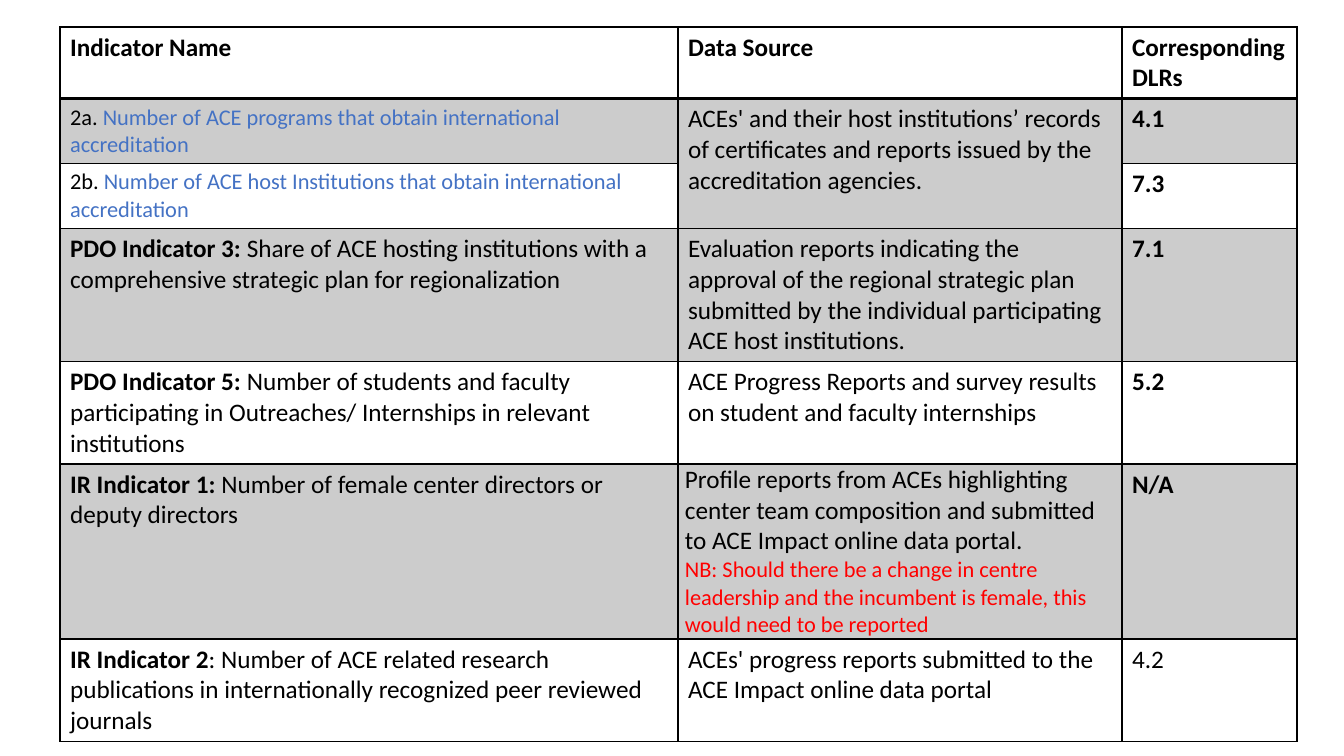
from lxml import etree
from pptx import Presentation
from pptx import util as u
from pptx.dml.color import RGBColor
from pptx.enum import text
from pptx.oxml.ns import qn

PX = 914400 / 100.8
HUES = {"ink": "000000", "blue": "4472C4", "red": "FF0000"}
COLS = [618, 444, 175]
ROWS = [71, 65, 65, 133, 102, 175, 102]
SHADED = (1, 3, 5)
HEAD = {"bold": True}
BODY = {"bold": False}
SMALL = {"size": u.Pt(16)}
LINK = {"size": u.Pt(16), "hue": "blue"}
NOTE = {"size": u.Pt(16), "hue": "red"}

GRID = [
    [[[("Indicator Name", HEAD)]],
     [[("Data Source", HEAD)]],
     [[("Corresponding DLRs", HEAD)]]],
    [[[("2a. ", SMALL),
       ("Number of ACE programs that obtain international accreditation", LINK)]],
     [[("ACEs' and their host institutions’ records of certificates and "
        "reports issued by the accreditation agencies.", BODY)]],
     [[("4.1", HEAD)]]],
    [[[("2b. ", SMALL),
       ("Number of ACE host Institutions that obtain international accreditation", LINK)]],
     [],
     [[("7.3", HEAD)]]],
    [[[("PDO Indicator 3: ", HEAD),
       ("Share of ACE hosting institutions with a comprehensive strategic "
        "plan for regionalization", BODY)]],
     [[("Evaluation reports indicating the approval of the regional strategic "
        "plan submitted by the individual participating ACE host institutions.", BODY)]],
     [[("7.1", HEAD)]]],
    [[[("PDO Indicator 5: ", HEAD),
       ("Number of students and faculty participating in Outreaches/ "
        "Internships in relevant institutions", BODY)]],
     [[("ACE Progress Reports and survey results on student and faculty "
        "internships", BODY)]],
     [[("5.2", HEAD)]]],
    [[[("IR Indicator 1:", HEAD),
       (" Number of female center directors or deputy directors", BODY)]],
     [[("Profile reports from ACEs highlighting center team composition and "
        "submitted to ACE Impact online data portal.", BODY)],
      [("NB: Should there be a change in centre leadership and the incumbent "
        "is female, this would need to be reported", NOTE)]],
     [[("N/A", HEAD)]]],
    [[[("IR Indicator 2", HEAD),
       (": Number of ACE related research publications in internationally "
        "recognized peer reviewed journals", BODY)]],
     [[("ACEs' progress reports submitted to the ACE Impact online data portal", BODY)]],
     [[("4.2", BODY)]]],
]


def px(n):
    return u.Emu(round(n * PX))


def assign(item, values):
    for name, value in values.items():
        setattr(item, name, value)


def write(cell, paras):
    frame = cell.text_frame
    for i, runs in enumerate(paras):
        para = frame.paragraphs[0] if i == 0 else frame.add_paragraph()
        for words, style in runs:
            run = para.add_run()
            run.text = words
            look = {"name": "Calibri", "size": u.Pt(18), "bold": False, **style}
            hue = look.pop("hue", "ink")
            assign(run.font, look)
            run.font.color.rgb = RGBColor.from_string(HUES[hue])


def border(cell, row):
    props = cell._tc.get_or_add_tcPr()
    heavy = {0: "lnB", 1: "lnT"}.get(row)
    for side in ("lnL", "lnR", "lnT", "lnB"):
        width = u.Pt(2 if side == heavy else 1)
        line = etree.SubElement(props, qn("a:" + side), w=str(width))
        fill = etree.SubElement(line, qn("a:solidFill"))
        etree.SubElement(fill, qn("a:srgbClr"), val=HUES["ink"])


def shade(cell, dark):
    if not dark:
        cell.fill.background()
        return
    cell.fill.solid()
    cell.fill.fore_color.rgb = RGBColor.from_string(HUES["ink"])
    color = cell._tc.tcPr.find(qn("a:solidFill"))[0]
    etree.SubElement(color, qn("a:alpha"), val="20000")


def indicators(slide, left, top):
    box = map(px, (left, top, sum(COLS), sum(ROWS)))
    table = slide.shapes.add_table(len(ROWS), len(COLS), *box).table
    assign(table, {"first_row": False, "horz_banding": False})
    for col, width in zip(table.columns, COLS):
        col.width = px(width)
    for r, (row, high) in enumerate(zip(table.rows, ROWS)):
        row.height = px(high)
        for c, cell in enumerate(row.cells):
            write(cell, GRID[r][c])
            border(cell, r)
            shade(cell, r in SHADED)
    table.cell(1, 1).merge(table.cell(2, 1))
    assign(table.cell(5, 1), {
        "margin_left": px(7), "margin_right": px(7),
        "margin_top": 0, "margin_bottom": 0,
        "vertical_anchor": text.MSO_ANCHOR.MIDDLE,
    })


def main():
    deck = Presentation()
    assign(deck, {"slide_width": px(1344), "slide_height": px(756)})
    slide = deck.slides.add_slide(deck.slide_layouts[6])
    indicators(slide, 60, 27)
    deck.save("out.pptx")


if __name__ == "__main__":
    main()
